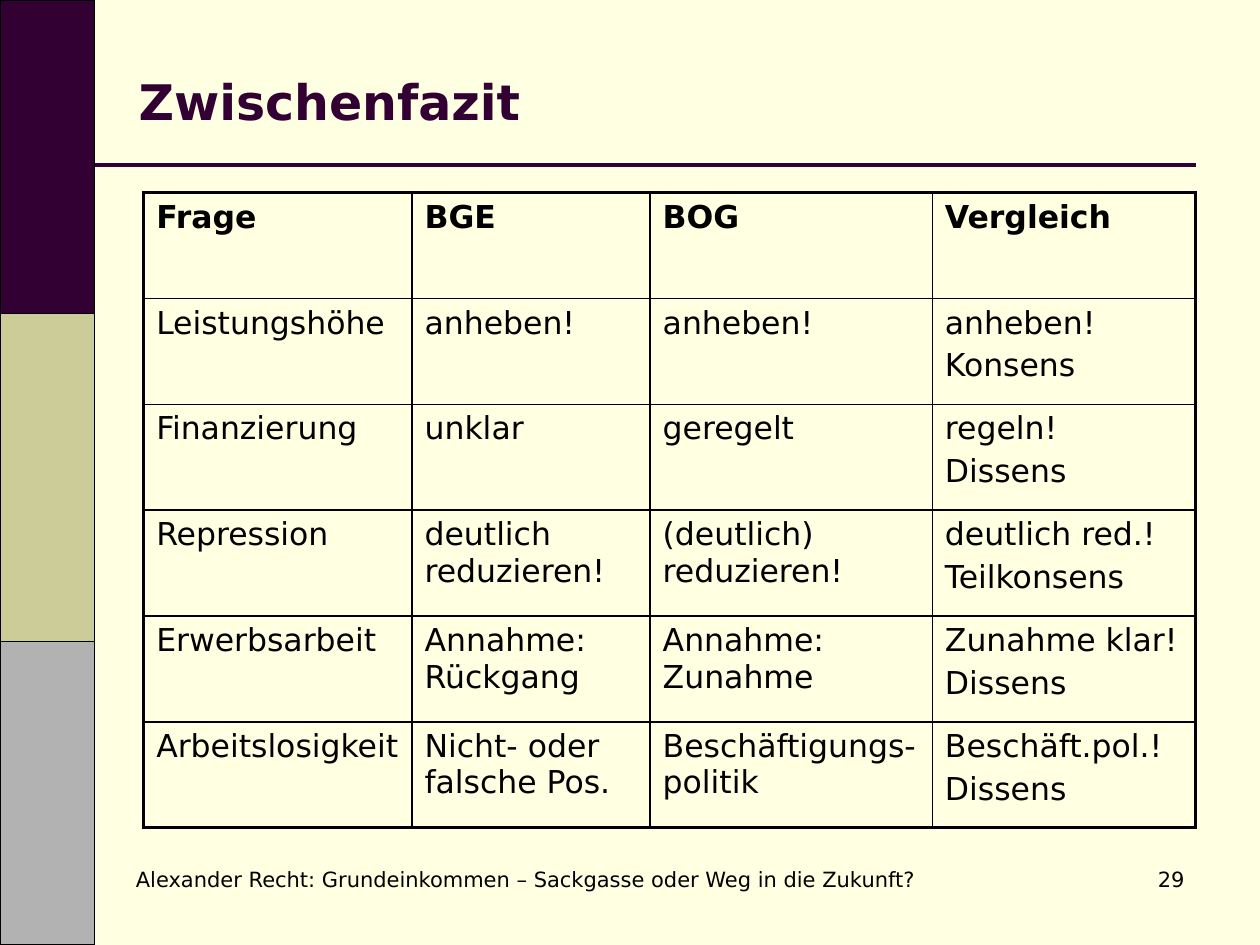
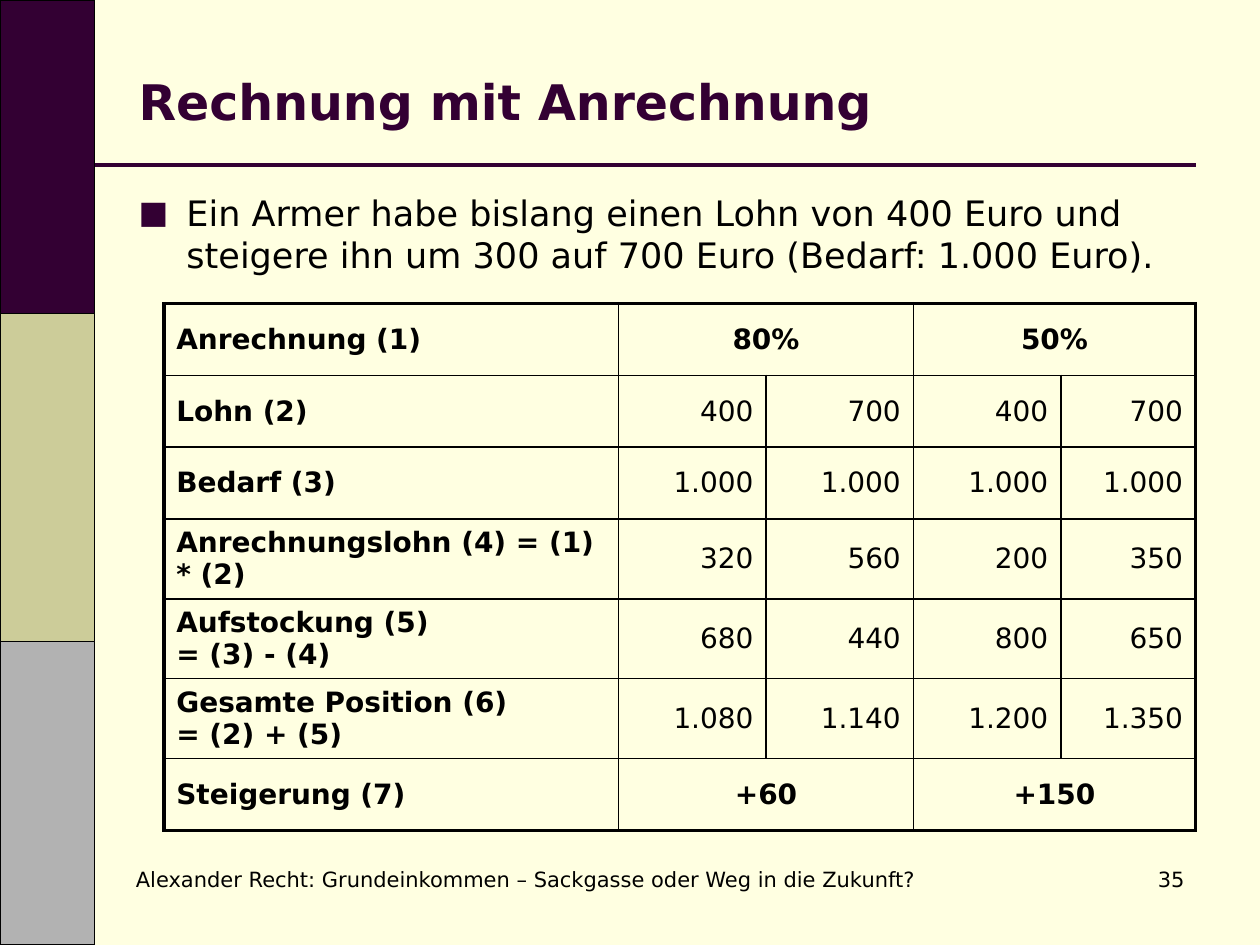
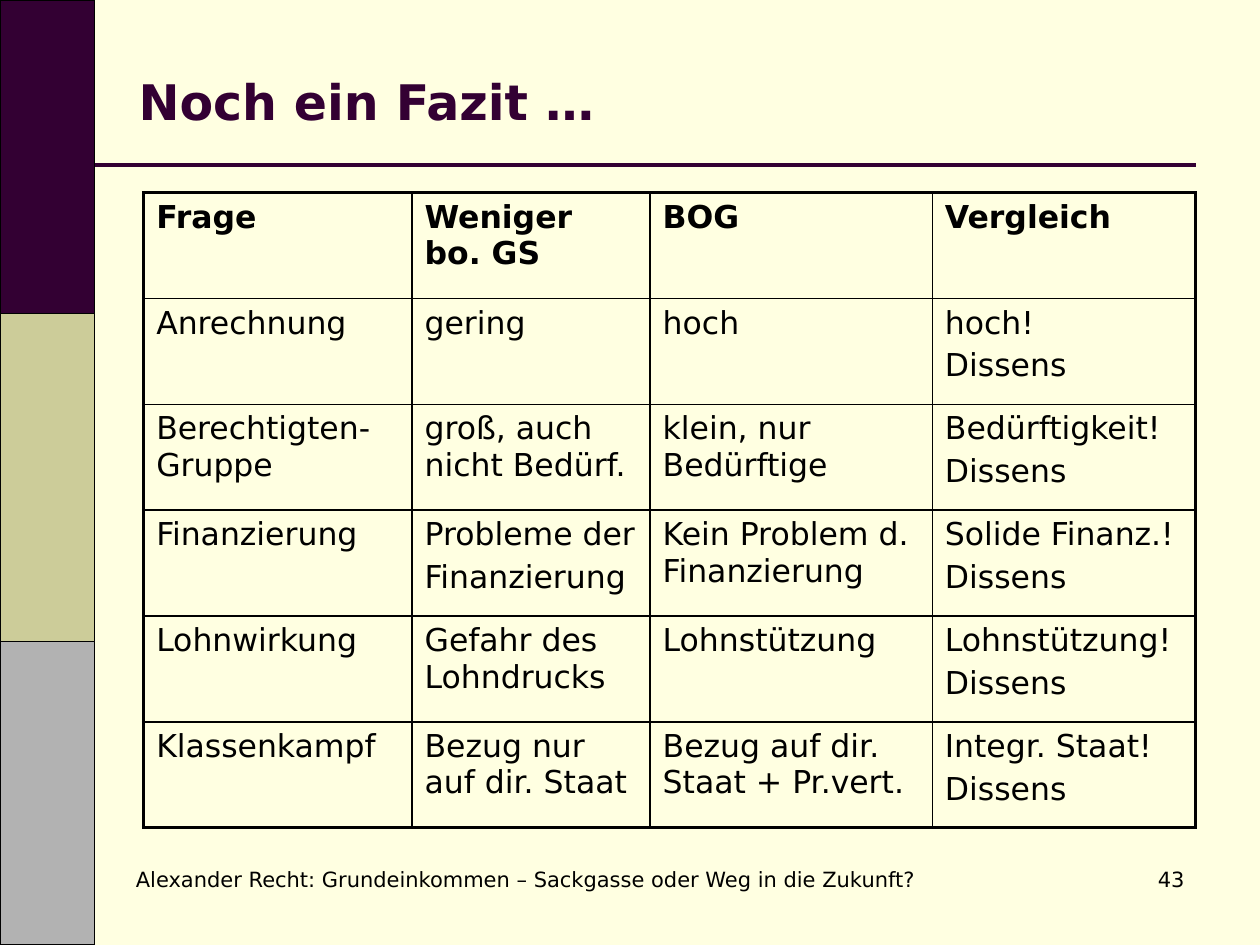
import pptx
import pptx.util
import pptx.dml.color
import pptx.enum.shapes
import pptx.enum.text
import pptx.oxml.ns
import lxml.etree

Inches = pptx.util.Inches
Pt = pptx.util.Pt
ALIGN = pptx.enum.text.PP_ALIGN
ANCHOR = pptx.enum.text.MSO_ANCHOR

COLORS = {
    "paper": "FFFFE1",
    "plum": "330033",
    "olive": "CCCC99",
    "gray": "B2B2B2",
    "ink": "000000",
}
FONT = "DejaVu Sans"
FOOTER = "Alexander Recht: Grundeinkommen – Sackgasse oder Weg in die Zukunft?"
BANDS = [("plum", 2.49), ("olive", 2.6), ("gray", 2.41)]
BAND_WIDTH = 0.75

COMPARISON = {
    "at": (1.14, 1.53),
    "columns": [2.13, 1.89, 2.24, 2.09],
    "rows": [0.84] * 6,
    "size": 18,
    "anchor": ANCHOR.TOP,
    "number_align": ALIGN.LEFT,
    "bold_labels": False,
}
CALCULATION = {
    "at": (1.3, 2.41),
    "columns": [3.61, 1.17, 1.17, 1.17, 1.07],
    "rows": [0.57, 0.57, 0.57, 0.6, 0.6, 0.61, 0.57],
    "size": 16,
    "anchor": ANCHOR.MIDDLE,
    "number_align": ALIGN.RIGHT,
    "bold_labels": True,
}

SLIDES = [
    {
        "title": "Zwischenfazit",
        "number": "29",
        "layout": COMPARISON,
        "cells": [
            ["Frage", "BGE", "BOG", "Vergleich"],
            ["Leistungshöhe", "anheben!", "anheben!", ("anheben!", "Konsens")],
            ["Finanzierung", "unklar", "geregelt", ("regeln!", "Dissens")],
            ["Repression", "deutlich reduzieren!", "(deutlich) reduzieren!",
             ("deutlich red.!", "Teilkonsens")],
            ["Erwerbsarbeit", "Annahme: Rückgang", "Annahme: Zunahme",
             ("Zunahme klar!", "Dissens")],
            ["Arbeitslosigkeit", "Nicht- oder falsche Pos.", "Beschäftigungs-politik",
             ("Beschäft.pol.!", "Dissens")],
        ],
    },
    {
        "title": "Rechnung mit Anrechnung",
        "number": "35",
        "bullet": "Ein Armer habe bislang einen Lohn von 400 Euro und steigere ihn "
                  "um 300 auf 700 Euro (Bedarf: 1.000 Euro).",
        "layout": CALCULATION,
        "cells": [
            ["Anrechnung (1)", "80%", None, "50%", None],
            ["Lohn (2)", "400", "700", "400", "700"],
            ["Bedarf (3)", "1.000", "1.000", "1.000", "1.000"],
            ["Anrechnungslohn (4) = (1) * (2)", "320", "560", "200", "350"],
            ["Aufstockung (5)\n= (3) - (4)", "680", "440", "800", "650"],
            ["Gesamte Position (6)\n= (2) + (5)", "1.080", "1.140", "1.200", "1.350"],
            ["Steigerung (7)", "+60", None, "+150", None],
        ],
    },
    {
        "title": "Noch ein Fazit …",
        "number": "43",
        "layout": COMPARISON,
        "cells": [
            ["Frage", "Weniger bo. GS", "BOG", "Vergleich"],
            ["Anrechnung", "gering", "hoch", ("hoch!", "Dissens")],
            ["Berechtigten-Gruppe", "groß, auch nicht Bedürf.", "klein, nur Bedürftige",
             ("Bedürftigkeit!", "Dissens")],
            ["Finanzierung", ("Probleme der", "Finanzierung"),
             "Kein Problem d. Finanzierung", ("Solide Finanz.!", "Dissens")],
            ["Lohnwirkung", "Gefahr des Lohndrucks", "Lohnstützung",
             ("Lohnstützung!", "Dissens")],
            ["Klassenkampf", "Bezug nur auf dir. Staat",
             "Bezug auf dir. Staat + Pr.vert.", ("Integr. Staat!", "Dissens")],
        ],
    },
]


def rgb(name):
    return pptx.dml.color.RGBColor.from_string(COLORS[name])


def add_xml(parent, tag, **attributes):
    return lxml.etree.SubElement(parent, pptx.oxml.ns.qn(tag), attributes)


def write(frame, content, size, color="ink", bold=False, align=ALIGN.LEFT, spacing=0):
    frame.word_wrap = True
    lines = (content,) if isinstance(content, str) else content
    for index, text in enumerate(lines):
        para = frame.add_paragraph() if index else frame.paragraphs[0]
        para.alignment = align
        para.space_before = Pt(size * spacing)
        for part, piece in enumerate(text.split("\n")):
            if part:
                para.add_line_break()
            span = para.add_run()
            span.text = piece
            span.font.name = FONT
            span.font.size = Pt(size)
            span.font.bold = bold
            span.font.color.rgb = rgb(color)


def place(shape, left, top, width, height):
    shape.left, shape.top = Inches(left), Inches(top)
    shape.width, shape.height = Inches(width), Inches(height)


def add_frame(page, number):
    top = 0
    for color, height in BANDS:
        band = page.shapes.add_shape(
            pptx.enum.shapes.MSO_SHAPE.RECTANGLE,
            Inches(0), Inches(top), Inches(BAND_WIDTH), Inches(height))
        band.shadow.inherit = False
        band.fill.solid()
        band.fill.fore_color.rgb = rgb(color)
        band.line.color.rgb = rgb("ink")
        band.line.width = Pt(0.75)
        top += height
    rule = page.shapes.add_connector(
        pptx.enum.shapes.MSO_CONNECTOR.STRAIGHT,
        Inches(BAND_WIDTH), Inches(1.31), Inches(9.49), Inches(1.31))
    rule.line.color.rgb = rgb("plum")
    rule.line.width = Pt(2)
    add_xml(rule.element.spPr, "a:effectLst")
    for text, left, width, align in [(FOOTER, 0.98, 6.85, ALIGN.LEFT),
                                     (number, 7.91, 1.59, ALIGN.RIGHT)]:
        box = page.shapes.add_textbox(Inches(left), Inches(6.83), Inches(width), Inches(0.5))
        write(box.text_frame, text, 12, align=align)


def add_title(page, text):
    title = page.shapes.title
    place(title, 1, 0.3, 8.5, 1.01)
    title.text_frame.vertical_anchor = ANCHOR.MIDDLE
    write(title.text_frame, text, 28, "plum", bold=True)


def add_bullet(page, text):
    body = page.placeholders[1]
    place(body, 1, 1.47, 8.5, 0.87)
    write(body.text_frame, text, 20, spacing=0.2)
    props = body.text_frame.paragraphs[0]._p.get_or_add_pPr()
    props.set("marL", str(Inches(0.38)))
    props.set("indent", str(-Inches(0.38)))
    add_xml(add_xml(props, "a:buClr"), "a:srgbClr", val=COLORS["plum"])
    add_xml(props, "a:buSzPct", val="90000")
    add_xml(props, "a:buFont", typeface=FONT)
    add_xml(props, "a:buChar", char="■")


def set_borders(cell, outer):
    props = cell._tc.get_or_add_tcPr()
    for side in "LRTB":
        width = Pt(2.25 if outer[side] else 1)
        line = add_xml(props, f"a:ln{side}", w=str(width))
        add_xml(add_xml(line, "a:solidFill"), "a:srgbClr", val=COLORS["ink"])
    cell.fill.background()


def add_grid(page, cells, layout):
    columns, rows = layout["columns"], layout["rows"]
    left, top = layout["at"]
    table = page.shapes.add_table(
        len(rows), len(columns), Inches(left), Inches(top),
        Inches(sum(columns)), Inches(sum(rows))).table
    table.first_row = table.horz_banding = False
    for column, width in zip(table.columns, columns):
        column.width = Inches(width)
    for row, height in zip(table.rows, rows):
        row.height = Inches(height)
    for r, values in enumerate(cells):
        for c, value in enumerate(values):
            cell = table.cell(r, c)
            merged = value is not None and values[c + 1:c + 2] == [None]
            if merged:
                cell.merge(table.cell(r, c + 1))
            set_borders(cell, {
                "L": c == 0,
                "R": c + cell.span_width == len(columns),
                "T": r == 0,
                "B": r == len(rows) - 1,
            })
            if value is None:
                continue
            cell.vertical_anchor = layout["anchor"]
            align = ALIGN.LEFT if c == 0 else layout["number_align"]
            write(cell.text_frame, value, layout["size"],
                  bold=r == 0 or merged or (c == 0 and layout["bold_labels"]),
                  align=ALIGN.CENTER if merged else align, spacing=0.2)


def main():
    deck = pptx.Presentation()
    deck.slide_width, deck.slide_height = Inches(10), Inches(7.5)
    background = deck.slide_master.background.fill
    background.solid()
    background.fore_color.rgb = rgb("paper")
    for content in SLIDES:
        bullet = content.get("bullet")
        page = deck.slides.add_slide(deck.slide_layouts[1 if bullet else 5])
        add_frame(page, content["number"])
        add_title(page, content["title"])
        if bullet:
            add_bullet(page, bullet)
        add_grid(page, content["cells"], content["layout"])
    deck.save("out.pptx")


if __name__ == "__main__":
    main()
